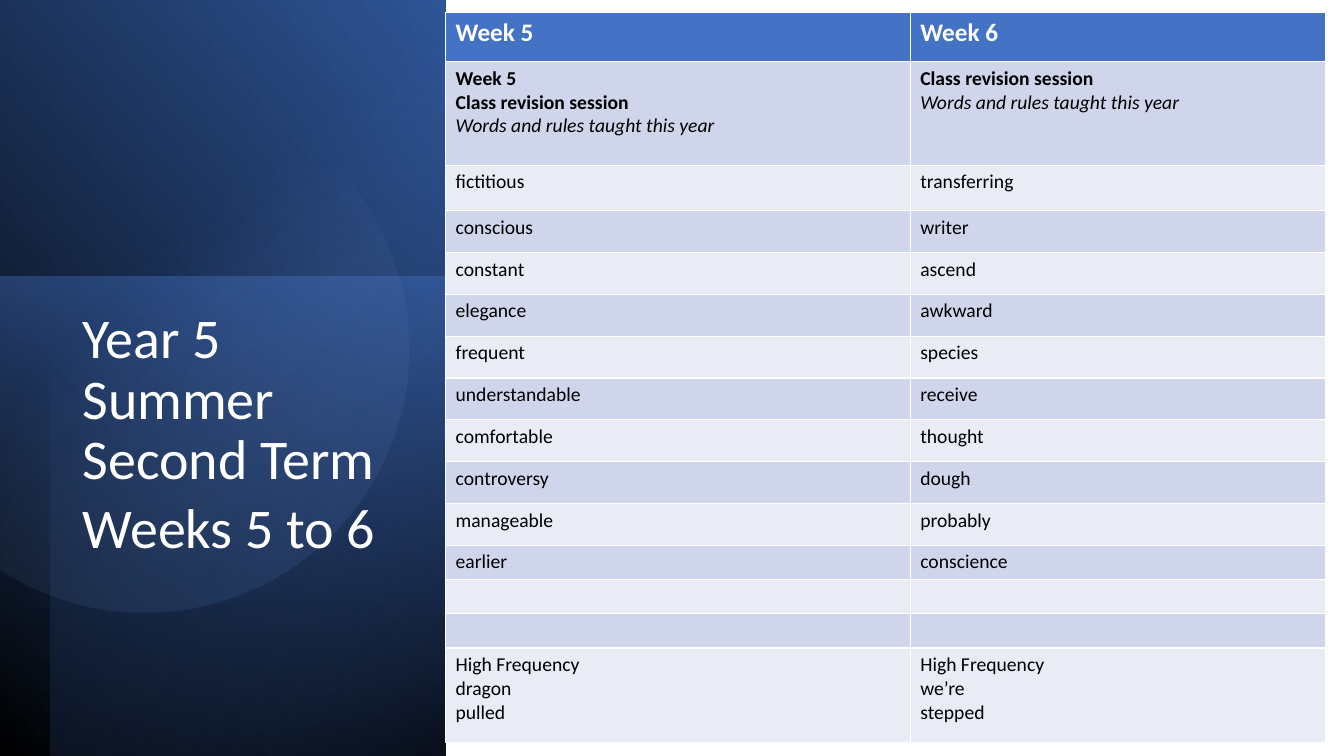
from math import cos, radians, sin

from lxml.etree import SubElement
from pptx import Presentation
from pptx.dml.color import RGBColor
from pptx.enum.shapes import MSO_SHAPE
from pptx.enum.text import MSO_ANCHOR
from pptx.oxml.ns import qn
from pptx.util import Inches, Pt

WIDE, HIGH = 133.33, 75
PANEL = 44.2
FONT = "Calibri"
BANDS = ["CFD5EA", "E9EBF5"]
INTRO = ("Week 5\nClass revision session\nWords and rules taught this year",
         "Class revision session\nWords and rules taught this year")
WORDS = [
    ("fictitious", "transferring"),
    ("conscious", "writer"),
    ("constant", "ascend"),
    ("elegance", "awkward"),
    ("frequent", "species"),
    ("understandable", "receive"),
    ("comfortable", "thought"),
    ("controversy", "dough"),
    ("manageable", "probably"),
    ("earlier", "conscience"),
    ("", ""),
    ("", ""),
    ("High Frequency\ndragon\npulled", "High Frequency\nwe’re\nstepped"),
]
COLS = [46.1, 41.2]
ROWS = [4.9, 10.3, 4.5] + [4.15] * 8 + [3.4] * 3 + [9.4]


def grid(count):
    """Turn a count of grid steps, ten to the inch, into a length."""
    return Inches(count / 10)


def tint(code):
    """Make a colour from a hex string."""
    return RGBColor.from_string(code)


def blend(shape, stops, angle):
    """Fill a shape with a linear gradient of (place, colour, opacity) stops."""
    shape.shadow.inherit = False
    shape.line.fill.background()
    shape.fill.gradient()
    grad = shape._element.spPr.find(qn("a:gradFill"))
    for child in list(grad):
        grad.remove(child)
    grad.set("rotWithShape", "1")
    row = SubElement(grad, qn("a:gsLst"))
    for place, code, alpha in stops:
        stop = SubElement(row, qn("a:gs"), pos=str(place * 1000))
        color = SubElement(stop, qn("a:srgbClr"), val=code)
        SubElement(color, qn("a:alpha"), val=str(alpha * 1000))
    SubElement(grad, qn("a:lin"), ang=str(angle * 60000), scaled="0")


def pane(slide, box, turn, flip, stops, angle):
    """Add a turned rectangle with a gradient."""
    shape = slide.shapes.add_shape(MSO_SHAPE.RECTANGLE, *map(grid, box))
    shape.rotation = turn
    if flip:
        shape._element.spPr.find(qn("a:xfrm")).set("flipH", "1")
    blend(shape, stops, angle)


def disc(slide, mid, size, reach, stops, angle):
    """Add a circle cut off along its left side."""
    dots = [(grid(mid[0] + size * cos(radians(turn))),
             grid(mid[1] + size * sin(radians(turn))))
            for turn in range(-reach, reach + 1, 3)]
    form = slide.shapes.build_freeform(*dots[0])
    form.add_line_segments(dots[1:], close=True)
    blend(form.convert_to_shape(), stops, angle)


def write(frame, text, size, code, marks=""):
    """Write lines of text, each bold (b), italic (i) or plain by its mark."""
    frame.word_wrap = True
    for count, line in enumerate(text.split("\n")):
        para = frame.paragraphs[0] if count == 0 else frame.add_paragraph()
        mark = marks[count:count + 1]
        font = para.font
        font.name, font.size = FONT, Pt(size)
        font.bold, font.italic = mark == "b", mark == "i"
        font.color.rgb = tint(code)
        if line:
            para.add_run().text = line
        else:
            SubElement(para._p, qn("a:endParaRPr"), sz=str(size * 100))


def title(slide, text, box):
    """Add the large heading on the dark panel."""
    frame = slide.shapes.add_textbox(*map(grid, box)).text_frame
    frame.vertical_anchor = MSO_ANCHOR.TOP
    write(frame, text, 40, "FFFFFF")
    for para in frame.paragraphs:
        para.line_spacing = 0.9
        para.space_after = Pt(6)


def fill_row(table, row, texts, fill, size=14, code="000000", marks=("", "")):
    """Fill one row of the table."""
    for col, text in enumerate(texts):
        cell = table.cell(row, col)
        cell.fill.solid()
        cell.fill.fore_color.rgb = tint(fill)
        write(cell.text_frame, text, size, code, marks[col])


def word_list(slide, left, top):
    """Add the table of weekly words."""
    table = slide.shapes.add_table(
        len(ROWS), len(COLS), grid(left), grid(top),
        grid(sum(COLS)), grid(sum(ROWS))).table
    for col, width in zip(table.columns, COLS):
        col.width = grid(width)
    for row, height in zip(table.rows, ROWS):
        row.height = grid(height)
    fill_row(table, 0, ("Week 5", "Week 6"), "4472C4", 18, "FFFFFF", "bb")
    fill_row(table, 1, INTRO, BANDS[0], marks=("bbi", "bi"))
    for row, pair in enumerate(WORDS, 2):
        fill_row(table, row, pair, BANDS[(row - 1) % 2])


def main():
    """Build the slide and save it."""
    deck = Presentation()
    deck.slide_width, deck.slide_height = grid(WIDE), grid(HIGH)
    slide = deck.slides.add_slide(deck.slide_layouts[6])
    pane(slide, (-15.5, 15.5, 75.2, PANEL), 90, True,
         [(0, "000000", 100), (100, "2F5597", 100)], 310)
    pane(slide, (-1.7, 29.1, 47.6, PANEL), 270, False,
         [(0, "4472C4", 50), (100, "203864", 0)], 190)
    pane(slide, (-12.9, 17.9, HIGH, 39.2), 270, True,
         [(0, "000000", 59), (69, "4472C4", 0)], 220)
    disc(slide, (14.3, 34.6), 26.2, 123,
         [(39, "8FAADC", 0), (100, "2F5597", 26)], 52)
    title(slide, "Year 5 Summer Second Term\nWeeks 5 to 6",
          (7.2, 30.3, 31.5, 33.6))
    word_list(slide, PANEL, 1.2)
    deck.save("out.pptx")


if __name__ == "__main__":
    main()
